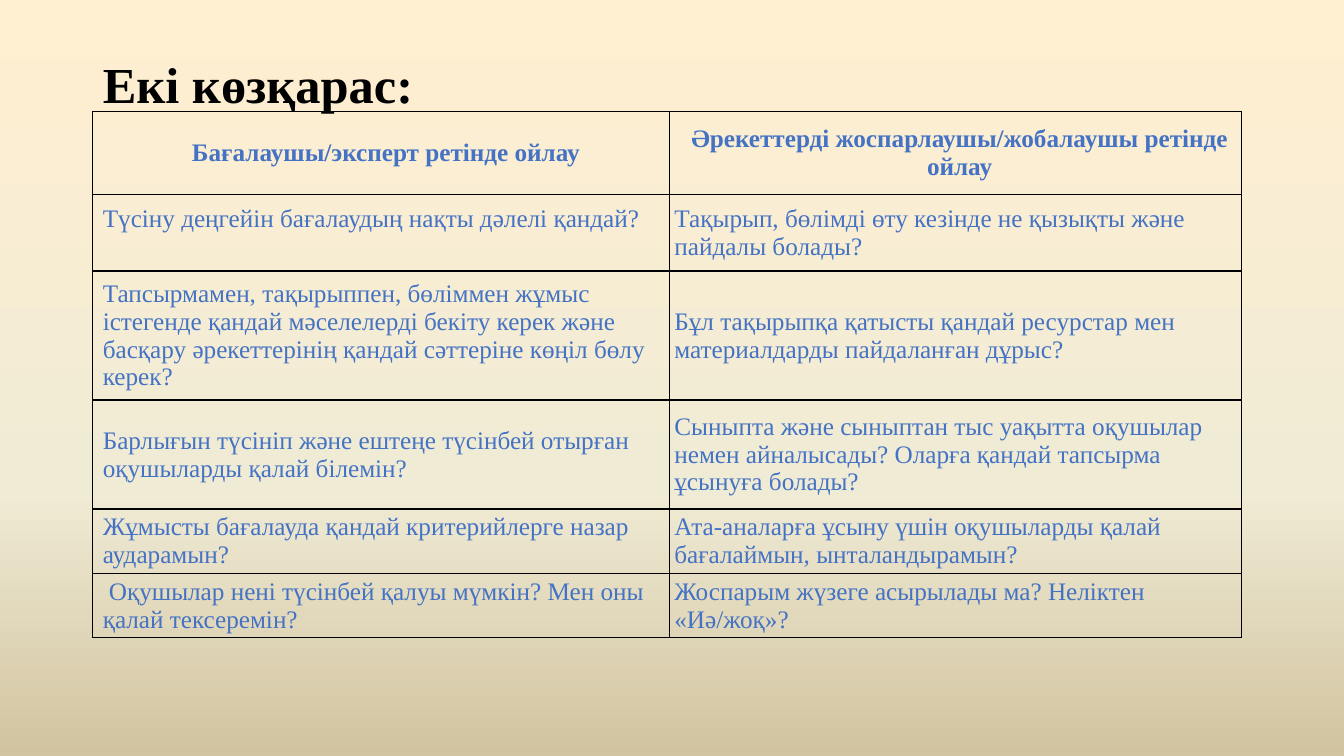
from copy import deepcopy
from dataclasses import dataclass

from lxml.etree import SubElement
from pptx import Presentation
from pptx.dml.color import RGBColor
from pptx.enum.text import MSO_ANCHOR as Anchor, PP_ALIGN as Align
from pptx.oxml.ns import qn
from pptx.util import Emu, Inches, Pt

SLIDE_W, SLIDE_H = Inches(13.33), Inches(7.5)
FONT = "Times New Roman"
INK, BLUE = "000000", "4472C4"
BACKDROP = [(0, "FFEFD1"), (0.65, "F0EBD5"), (1, "D1C39F")]

# Shares of the slide, in percent
LEFT, TABLE_TOP = 6.9, 14.8
COLUMNS = [42.9, 42.6]
ROWS = [10.93, 10.13, 17.07, 14.4, 8.53, 8.53]
HEADER_INDENTS = [0.75, 0.6]
BODY_INDENTS = [0.75, 0.38]


@dataclass
class Entry:
    text: str
    first_line: float = 0
    below: float = 0


VIEWPOINTS = [
    (Entry("Бағалаушы/эксперт ретінде ойлау"),
     Entry("Әрекеттерді жоспарлаушы/жобалаушы ретінде ойлау")),
    (Entry("Түсіну деңгейін бағалаудың нақты дәлелі қандай?", below=3.7),
     Entry("Тақырып, бөлімді өту кезінде не қызықты және пайдалы болады?")),
    (Entry("Тапсырмамен, тақырыппен, бөліммен жұмыс істегенде қандай мәселелерді "
           "бекіту керек және басқару әрекеттерінің қандай сәттеріне көңіл бөлу керек?"),
     Entry("Бұл тақырыпқа қатысты қандай ресурстар мен материалдарды пайдаланған дұрыс?")),
    (Entry("Барлығын түсініп және ештеңе түсінбей отырған оқушыларды қалай білемін?"),
     Entry("Сыныпта және сыныптан тыс уақытта оқушылар немен айналысады? "
           "Оларға қандай тапсырма ұсынуға болады?")),
    (Entry("Жұмысты бағалауда қандай критерийлерге назар аударамын?"),
     Entry("Ата-аналарға ұсыну үшін оқушыларды қалай бағалаймын, ынталандырамын?")),
    (Entry("Оқушылар нені түсінбей қалуы мүмкін? Мен оны қалай тексеремін?", first_line=0.45),
     Entry("Жоспарым жүзеге асырылады ма? Неліктен «Иә/жоқ»?")),
]


def across(percent: float) -> Emu:
    return Emu(round(SLIDE_W * percent / 100))


def down(percent: float) -> Emu:
    return Emu(round(SLIDE_H * percent / 100))


def color(code: str) -> RGBColor:
    return RGBColor.from_string(code)


def format_text(paragraph, size: float, code: str, bold: bool) -> None:
    for run in paragraph.runs:
        run.font.name, run.font.size, run.font.bold = FONT, Pt(size), bold
        run.font.color.rgb = color(code)


def paint_backdrop(slide) -> None:
    fill = slide.background.fill
    fill.gradient()
    fill.gradient_angle = 270
    stop_list = slide.element.find(".//" + qn("a:gsLst"))
    stop_list.append(deepcopy(stop_list[-1]))
    for stop, (position, code) in zip(fill.gradient_stops, BACKDROP):
        stop.position = position
        stop.color.rgb = color(code)


def add_borders(cell) -> None:
    properties = cell._tc.get_or_add_tcPr()
    for place, side in enumerate(("lnL", "lnR", "lnT", "lnB")):
        line = SubElement(properties, qn(f"a:{side}"), w=str(Pt(1)))
        ink = SubElement(line, qn("a:solidFill"))
        SubElement(ink, qn("a:srgbClr"), val=INK)
        properties.insert(place, line)


def fill_cell(cell, entry: Entry, indent: float, header: bool) -> None:
    cell.margin_left = cell.margin_right = cell.margin_top = 0
    cell.margin_bottom = down(entry.below)
    cell.vertical_anchor = Anchor.MIDDLE
    cell.fill.background()
    add_borders(cell)
    cell.text_frame.text = entry.text
    paragraph = cell.text_frame.paragraphs[0]
    paragraph.alignment = Align.CENTER if header else Align.LEFT
    layout = paragraph._p.get_or_add_pPr()
    layout.set("marL", str(across(indent)))
    layout.set("indent", str(across(entry.first_line)))
    format_text(paragraph, 18, BLUE, header)


def add_title(slide) -> None:
    title = slide.shapes.title
    title.left, title.top = across(LEFT), down(1.87)
    title.width, title.height = across(86.25), down(19.33)
    title.text_frame.text = "Екі көзқарас:"
    title.text_frame.vertical_anchor = Anchor.MIDDLE
    heading = title.text_frame.paragraphs[0]
    heading.alignment, heading.line_spacing = Align.LEFT, 0.9
    format_text(heading, 36, INK, True)


def add_viewpoints(slide) -> None:
    table = slide.shapes.add_table(
        len(ROWS), len(COLUMNS), across(LEFT), down(TABLE_TOP),
        across(sum(COLUMNS)), down(sum(ROWS))).table
    table.first_row = table.horz_banding = False
    for column, share in zip(table.columns, COLUMNS):
        column.width = across(share)
    for number, (row, share, entries) in enumerate(zip(table.rows, ROWS, VIEWPOINTS)):
        row.height = down(share)
        header = number == 0
        indents = HEADER_INDENTS if header else BODY_INDENTS
        for cell, entry, indent in zip(row.cells, entries, indents):
            fill_cell(cell, entry, indent, header)


def main() -> None:
    deck = Presentation()
    deck.slide_width, deck.slide_height = SLIDE_W, SLIDE_H
    slide = deck.slides.add_slide(deck.slide_layouts[5])
    paint_backdrop(slide)
    add_title(slide)
    add_viewpoints(slide)
    deck.save("out.pptx")


if __name__ == "__main__":
    main()
